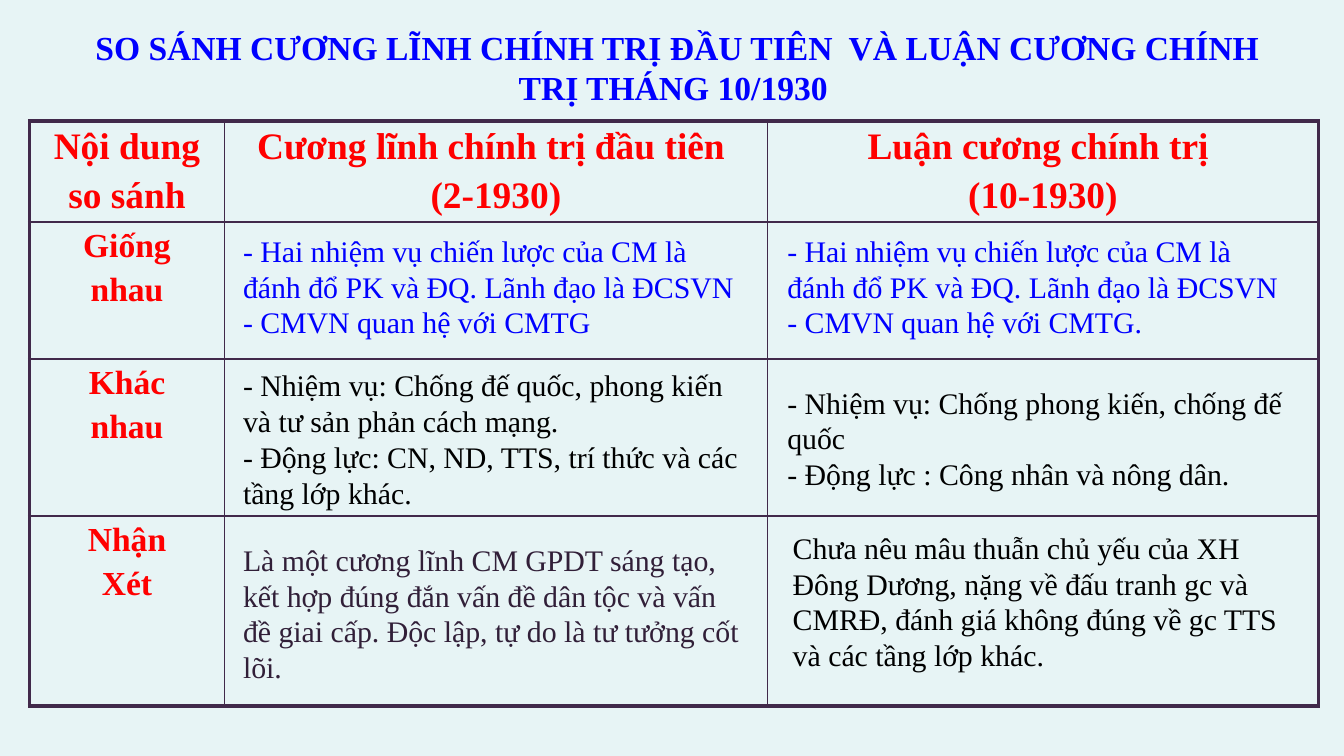
from lxml import etree
from pptx import Presentation
from pptx import util as u
from pptx.dml.color import RGBColor
from pptx.enum import text
from pptx.oxml import ns

FONT = "Times New Roman"
BORDER = "41294A"
BLUE, RED, BLACK, PURPLE = "0000FF", "FF0000", "000000", "311F38"


def style(paragraph, size, color, bold=False):
    paragraph.font.name = FONT
    paragraph.font.size = u.Pt(size)
    paragraph.font.bold = bold
    paragraph.font.color.rgb = RGBColor.from_string(color)


def add_border(cell, side, points):
    properties = cell._tc.get_or_add_tcPr()
    line = etree.SubElement(properties, ns.qn(f"a:{side}"), w=str(u.Pt(points)))
    fill = etree.SubElement(line, ns.qn("a:solidFill"))
    etree.SubElement(fill, ns.qn("a:srgbClr"), val=BORDER)


presentation = Presentation()
presentation.slide_width = u.Inches(10)
presentation.slide_height = u.Inches(10 * 9 / 16)
slide = presentation.slides.add_slide(presentation.slide_layouts[5])
slide.background.fill.solid()
slide.background.fill.fore_color.rgb = RGBColor.from_string("E7F4F5")

title = slide.shapes.title
title.left, title.top = u.Inches(0.3), u.Inches(0.15)
title.width, title.height = u.Inches(9.42), u.Inches(0.71)
frame = title.text_frame
frame.word_wrap = True
frame.auto_size = text.MSO_AUTO_SIZE.NONE
frame.vertical_anchor = text.MSO_ANCHOR.TOP
frame.text = " SO SÁNH CƯƠNG LĨNH CHÍNH TRỊ ĐẦU TIÊN  VÀ LUẬN CƯƠNG CHÍNH TRỊ THÁNG 10/1930"
paragraph = frame.paragraphs[0]
paragraph.alignment = text.PP_ALIGN.CENTER
style(paragraph, 18, BLUE, True)

column_widths = [1.45, 4.04, 4.1]
row_heights = [0.66, 1.02, 1.17, 1.41]
headings = {
    (0, 0): ["Nội dung", "so sánh"],
    (0, 1): ["Cương lĩnh chính trị đầu tiên ", "(2-1930)"],
    (0, 2): ["Luận cương chính trị ", "(10-1930)"],
    (1, 0): ["Giống", "nhau"],
    (2, 0): ["Khác", "nhau"],
    (3, 0): ["Nhận", "Xét"],
}
last_row, last_column = len(row_heights) - 1, len(column_widths) - 1

table = slide.shapes.add_table(
    len(row_heights), len(column_widths),
    u.Inches(0.22), u.Inches(0.9), u.Inches(sum(column_widths)), u.Inches(sum(row_heights)),
).table
for column, width in zip(table.columns, column_widths):
    column.width = u.Inches(width)
for row, height in zip(table.rows, row_heights):
    row.height = u.Inches(height)

for row in range(len(row_heights)):
    for column in range(len(column_widths)):
        cell = table.cell(row, column)
        cell.margin_left = cell.margin_right = u.Inches(0.1)
        cell.margin_top = cell.margin_bottom = u.Inches(0.04)
        outer_sides = {"lnL": column == 0, "lnR": column == last_column,
                       "lnT": row == 0, "lnB": row == last_row}
        for side, is_outer in outer_sides.items():
            add_border(cell, side, 2.25 if is_outer else 1)
        cell.fill.background()
        if (row, column) not in headings:
            continue
        size = 20 if row == 0 else 18
        cell.text = "\n".join(headings[row, column])
        for index, paragraph in enumerate(cell.text_frame.paragraphs):
            paragraph.alignment = text.PP_ALIGN.CENTER
            if index:
                paragraph.space_before = u.Pt(size * 0.2)
            style(paragraph, size, RED, True)

common_tasks = "- Hai nhiệm vụ chiến lược của CM là đánh đổ PK và ĐQ. Lãnh đạo là ĐCSVN"
comparisons = [
    (1.71, 1.68, 0.91, BLUE, [common_tasks, "- CMVN quan hệ với CMTG"]),
    (5.76, 1.68, 0.91, BLUE, [common_tasks, "- CMVN quan hệ với CMTG."]),
    (1.71, 2.68, 1.18, BLACK, [
        "- Nhiệm vụ: Chống đế quốc, phong kiến và tư sản phản cách mạng.",
        "- Động lực: CN, ND, TTS, trí thức và các tầng lớp khác."]),
    (5.76, 2.81, 0.91, BLACK, [
        "- Nhiệm vụ: Chống phong kiến, chống đế quốc",
        "- Động lực : Công nhân và nông dân."]),
    (1.71, 3.98, 1.18, PURPLE, [
        "Là một cương lĩnh CM GPDT sáng tạo, kết hợp đúng đắn vấn đề dân tộc và vấn đề "
        "giai cấp. Độc lập, tự do là tư tưởng cốt lõi."]),
    (5.8, 3.89, 1.18, BLACK, [
        "Chưa nêu mâu thuẫn chủ yếu của XH Đông Dương, nặng về đấu tranh gc và CMRĐ, "
        "đánh giá không đúng về gc TTS và các tầng lớp khác."]),
]
for left, top, height, color, lines in comparisons:
    box = slide.shapes.add_textbox(u.Inches(left), u.Inches(top), u.Inches(3.95), u.Inches(height))
    box.text_frame.word_wrap = True
    box.text_frame.text = "\n".join(lines)
    for paragraph in box.text_frame.paragraphs:
        style(paragraph, 16, color)

presentation.save("out.pptx")
